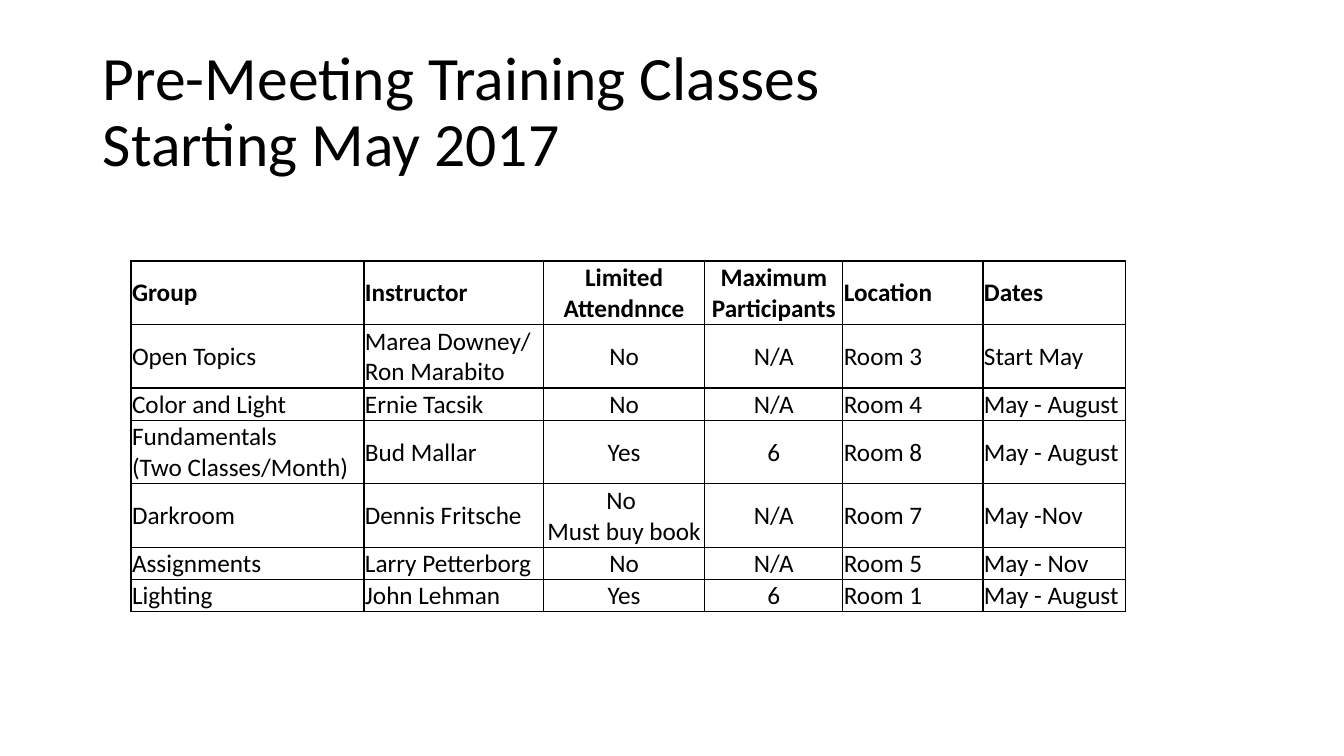
import pptx
import pptx.dml.color
import pptx.enum.text
import pptx.oxml
import pptx.oxml.ns
import pptx.util
from pptx.util import Inches

ALIGN = pptx.enum.text.PP_ALIGN
MIDDLE = pptx.enum.text.MSO_ANCHOR.MIDDLE
PLAIN_TABLE_STYLE = "{2D5ABB26-0587-4C30-8999-92F81FD0307C}"

COLUMN_WIDTHS = [2.31, 1.78, 1.6, 1.37, 1.39, 1.41]
CENTERED_COLUMNS = (2, 3)
SPACER, ONE_LINE, TWO_LINES = 0.25, 0.32, 0.63
BLANK = [""] * len(COLUMN_WIDTHS)
CLASSES = [
    (0.4, BLANK),
    (0.34, BLANK),
    (TWO_LINES, ["Group", "Instructor", "Limited Attendnnce", "Maximum Participants", "Location", "Dates"]),
    (TWO_LINES, ["Open Topics", "Marea Downey/ Ron Marabito", "No", "N/A", "Room 3", "Start May"]),
    (ONE_LINE, ["Color and Light", "Ernie Tacsik", "No", "N/A", "Room 4", "May - August"]),
    (TWO_LINES, ["Fundamentals \v(Two Classes/Month)", "Bud Mallar", "Yes", "6", "Room 8", "May - August"]),
    (TWO_LINES, ["Darkroom", "Dennis Fritsche", "No \vMust buy book", "N/A", "Room 7", "May -Nov"]),
    (ONE_LINE, ["Assignments", "Larry Petterborg", "No", "N/A", "Room 5", "May - Nov"]),
    (ONE_LINE, ["Lighting", "John Lehman", "Yes", "6", "Room 1", "May - August"]),
    (SPACER, BLANK),
]
HEADER_ROW = 2


def color(value):
    return pptx.dml.color.RGBColor.from_string(value)


def set_all(target, values):
    for name, value in values.items():
        setattr(target, name, value)


class ClassSlide:
    """Holds the text style and the page being filled."""

    font_name = "Calibri"
    ink = "000000"
    border_width = 1

    def __init__(self, deck):
        self.page = deck.slides.add_slide(deck.slide_layouts[5])

    def style_text(self, frame, size, bold=False, **para_format):
        for para in frame.paragraphs:
            set_all(para, para_format)
            for span in para.runs:
                set_all(span.font, {"name": self.font_name, "size": pptx.util.Pt(size), "bold": bold})
                span.font.color.rgb = color(self.ink)

    def title(self, text, left, top, width, height):
        box = self.page.shapes.title
        set_all(box, {"left": Inches(left), "top": Inches(top),
                      "width": Inches(width), "height": Inches(height)})
        frame = box.text_frame
        frame.text = text
        set_all(frame, {"vertical_anchor": MIDDLE, "word_wrap": True,
                        "auto_size": pptx.enum.text.MSO_AUTO_SIZE.NONE})
        self.style_text(frame, 44, alignment=ALIGN.LEFT, line_spacing=0.9)

    def border(self, cell, sides):
        """Draw the cell's edges named by letters L, R, T and B."""
        for side in sides:
            cell._tc.get_or_add_tcPr().append(pptx.oxml.parse_xml(
                f'<a:ln{side} {pptx.oxml.ns.nsdecls("a")} w="{pptx.util.Pt(self.border_width)}">'
                f'<a:solidFill><a:srgbClr val="{self.ink}"/></a:solidFill></a:ln{side}>'))

    def table(self, rows, widths, left, top):
        heights = [height for height, _ in rows]
        holder = self.page.shapes.add_table(
            len(rows), len(widths), Inches(left), Inches(top),
            Inches(sum(widths)), Inches(sum(heights)))
        table = holder.table
        set_all(table, {"first_row": False, "horz_banding": False})
        table._tbl.tblPr.find(pptx.oxml.ns.qn("a:tableStyleId")).text = PLAIN_TABLE_STYLE
        for column, width in zip(table.columns, widths):
            column.width = Inches(width)
        for row_index, (height, texts) in enumerate(rows):
            table.rows[row_index].height = Inches(height)
            for column_index, text in enumerate(texts):
                self.cell(table.cell(row_index, column_index), text,
                          row_index == HEADER_ROW, column_index in CENTERED_COLUMNS)
        table.cell(0, 0).merge(table.cell(0, len(widths) - 1))

    def cell(self, cell, text, bold, centered):
        set_all(cell, {"text": text, "vertical_anchor": MIDDLE, "margin_left": Inches(0.01),
                       "margin_right": Inches(0.01), "margin_top": Inches(0.01), "margin_bottom": 0})
        self.style_text(cell.text_frame, 18, bold, alignment=ALIGN.CENTER if centered else ALIGN.LEFT)
        if text:
            self.border(cell, "LRTB")
        cell.fill.background()


def main():
    deck = pptx.Presentation()
    set_all(deck, {"slide_width": Inches(13.33), "slide_height": Inches(7.5)})
    slide = ClassSlide(deck)
    slide.title("Pre-Meeting Training Classes\vStarting May 2017", 0.92, 0.4, 11.5, 1.45)
    slide.table(CLASSES, COLUMN_WIDTHS, 1.3, 1.85)
    deck.save("out.pptx")


if __name__ == "__main__":
    main()
